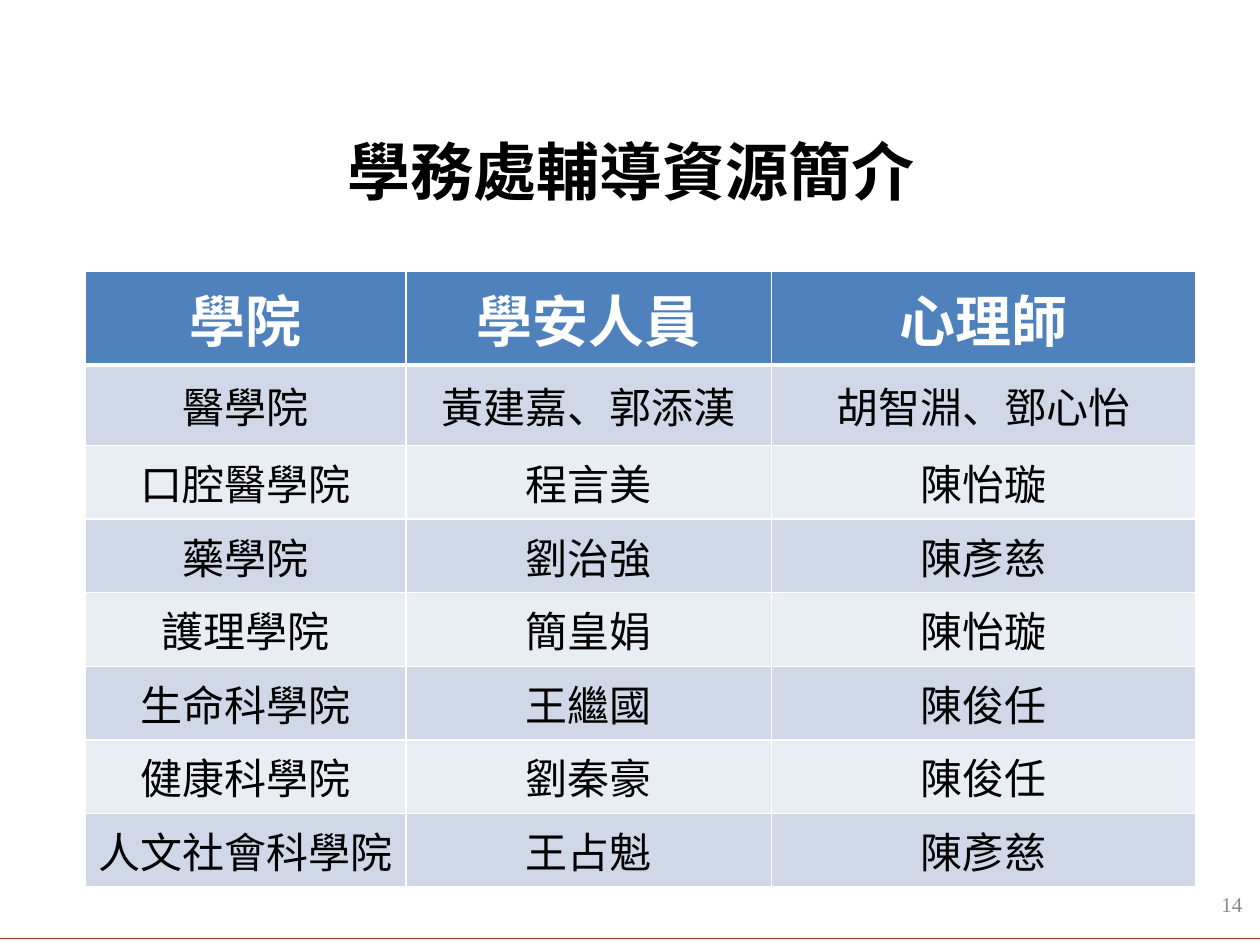
from dataclasses import dataclass

from lxml import etree
from pptx import Presentation
from pptx.dml.color import RGBColor
from pptx.enum.shapes import MSO_CONNECTOR
from pptx.enum.text import MSO_ANCHOR, PP_ALIGN
from pptx.oxml.ns import qn
from pptx.util import Pt

STRAIGHT = MSO_CONNECTOR.STRAIGHT
TOP, MIDDLE = MSO_ANCHOR.TOP, MSO_ANCHOR.MIDDLE
CENTER, RIGHT = PP_ALIGN.CENTER, PP_ALIGN.RIGHT
TITLE_ONLY = 5


@dataclass(frozen=True)
class Theme:
    latin: str = "Times New Roman"
    east_asian: str = "Noto Sans CJK SC"
    text: str = "000000"
    white: str = "FFFFFF"
    header: str = "4F81BD"
    bands: tuple = ("D0D8E8", "E9EDF4")
    page_number: str = "898989"
    rule: str = "953735"
    title_size: int = 36
    header_size: int = 32
    body_size: int = 24
    number_size: int = 12


THEME = Theme()

ROWS = [
    ("學院", "學安人員", "心理師"),
    ("醫學院", "黃建嘉、郭添漢", "胡智淵、鄧心怡"),
    ("口腔醫學院", "程言美", "陳怡璇"),
    ("藥學院", "劉治強", "陳彥慈"),
    ("護理學院", "簡皇娟", "陳怡璇"),
    ("生命科學院", "王繼國", "陳俊任"),
    ("健康科學院", "劉秦豪", "陳俊任"),
    ("人文社會科學院", "王占魁", "陳彥慈"),
]
COLUMN_WIDTHS = (183.5, 209, 242.5)
ROW_HEIGHTS = (33, 46) + (37.5,) * 6


def place(shape, box):
    shape.left, shape.top, shape.width, shape.height = (Pt(value) for value in box)


def write(text_frame, text, alignment, latin, size, color, bold=False):
    paragraph = text_frame.paragraphs[0]
    paragraph.text = text
    paragraph.alignment = alignment
    font = paragraph.font
    font.name, font.size, font.bold = latin, Pt(size), bold
    font.color.rgb = RGBColor.from_string(color)
    # The Chinese characters take the East Asian typeface
    properties = paragraph._p.pPr.find(qn("a:defRPr"))
    east_asian = etree.Element(qn("a:ea"), typeface=THEME.east_asian)
    properties.find(qn("a:latin")).addnext(east_asian)


def add_border(cell, side, width):
    properties = cell._tc.get_or_add_tcPr()
    line = etree.SubElement(properties, qn(f"a:ln{side}"), w=str(Pt(width)))
    fill = etree.SubElement(line, qn("a:solidFill"))
    etree.SubElement(fill, qn("a:srgbClr"), val=THEME.white)


def add_title(slide, box):
    title = slide.shapes.title
    place(title, box)
    title.text_frame.vertical_anchor = MIDDLE
    write(title.text_frame, "學務處輔導資源簡介", CENTER, THEME.latin,
          THEME.title_size, THEME.text, bold=True)


def add_staff_table(slide, box):
    frame = slide.shapes.add_table(len(ROWS), len(COLUMN_WIDTHS),
                                   *(Pt(value) for value in box))
    table = frame.table
    for column, width in zip(table.columns, COLUMN_WIDTHS):
        column.width = Pt(width)
    for row, height in zip(table.rows, ROW_HEIGHTS):
        row.height = Pt(height)

    for row_index, names in enumerate(ROWS):
        is_header = row_index == 0
        fill = THEME.header if is_header else THEME.bands[(row_index - 1) % 2]
        # A thick line parts the header from the body
        borders = {"L": 1, "R": 1, "T": 3 if row_index == 1 else 1,
                   "B": 3 if is_header else 1}
        for column_index, name in enumerate(names):
            cell = table.cell(row_index, column_index)
            for side, width in borders.items():
                add_border(cell, side, width)
            cell.fill.solid()
            cell.fill.fore_color.rgb = RGBColor.from_string(fill)
            cell.vertical_anchor = TOP if is_header else MIDDLE
            write(cell.text_frame, name, CENTER, THEME.east_asian,
                  THEME.header_size if is_header else THEME.body_size,
                  THEME.white if is_header else THEME.text, bold=is_header)


def add_footer(slide, box):
    left, top, width, height = box
    # Rule along the foot of the slide
    rule_top = Pt(top + height)
    rule = slide.shapes.add_connector(STRAIGHT, Pt(left), rule_top,
                                      Pt(left + width), rule_top)
    rule.line.color.rgb = RGBColor.from_string(THEME.rule)
    rule.line.width = Pt(0.75)
    etree.SubElement(rule._element.spPr, qn("a:effectLst"))

    # Page number, near the right edge
    number_width = 168
    number = slide.shapes.add_textbox(Pt(left + width - number_width - 3), Pt(top),
                                      Pt(number_width), Pt(28.75))
    number.text_frame.word_wrap = True
    number.text_frame.vertical_anchor = MIDDLE
    write(number.text_frame, "14", RIGHT, THEME.latin,
          THEME.number_size, THEME.page_number)


def main():
    presentation = Presentation()
    presentation.slide_width, presentation.slide_height = Pt(720), Pt(540)
    slide = presentation.slides.add_slide(presentation.slide_layouts[TITLE_ONLY])
    add_title(slide, (60, 71.5, 601, 52))
    add_staff_table(slide, (48.5, 155, sum(COLUMN_WIDTHS), sum(ROW_HEIGHTS)))
    add_footer(slide, (0, 502.5, 720, 34))
    presentation.save("out.pptx")


if __name__ == "__main__":
    main()
